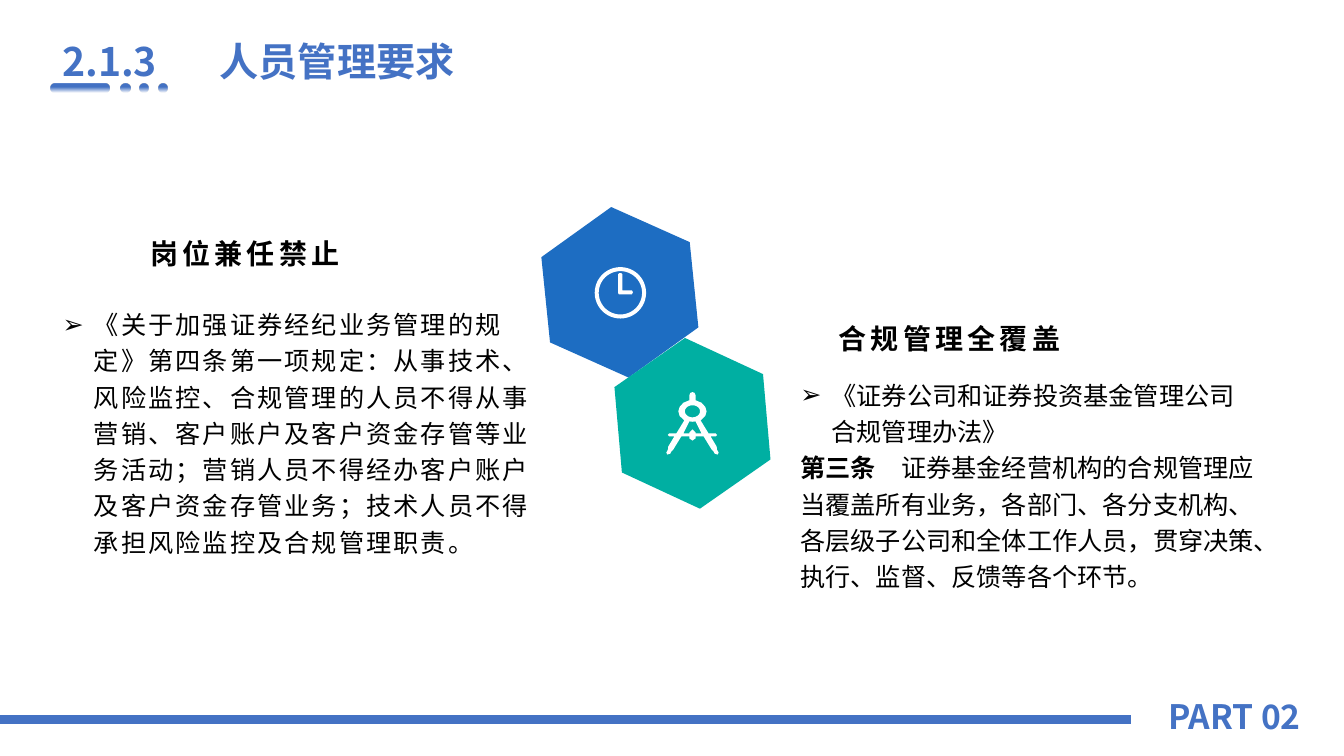
from dataclasses import dataclass
from math import cos, pi, sin
from typing import Any

from lxml.etree import SubElement as Sub
from pptx import Presentation as Deck
from pptx.dml.color import RGBColor as Rgb
from pptx.enum.shapes import MSO_CONNECTOR as Link, MSO_SHAPE as Kind
from pptx.enum.text import MSO_ANCHOR as Anchor, MSO_AUTO_SIZE as Auto, PP_ALIGN as Align
from pptx.oxml.ns import qn
from pptx.util import Pt

FACE = "Noto Sans CJK SC"
HUES = {"accent": "4472C4", "blue": "1D6DC2", "teal": "00AFA2",
        "white": "FFFFFF", "black": "000000"}
Spot = tuple[float, float]
Box = tuple[float, float, float, float]


@dataclass
class Run:
    text: str
    size: float = 18
    bold: bool = False
    hue: str = "black"
    gap: int = 0
    fade: bool = False


@dataclass
class Para:
    runs: list[Run]
    line: float = 1.2
    mark: str = ""


@dataclass
class Block:
    slot: int | None
    box: Box
    paras: list[Para]
    wrap: bool = True
    grow: bool = False


@dataclass
class Hex:
    box: Box
    turn: float
    hue: str


@dataclass
class Icon:
    x: float
    y: float
    rings: list[list[Spot]]


def put(thing: Any, form: dict[str, Any]) -> None:
    for name, value in form.items():
        setattr(thing, name, value)


def rgb(hue: str) -> Rgb:
    return Rgb.from_string(HUES[hue])


def blend(fill: Any, node: Any) -> None:
    """Accent colour fading out downwards."""
    fill.gradient()
    fill.gradient_angle = 270
    for stop, place in zip(fill.gradient_stops, (0.4, 1)):
        stop.color.rgb = rgb("accent")
        stop.position = place
    last = list(node.iter(qn("a:srgbClr")))[-1]
    Sub(last, qn("a:alpha")).set("val", "0")


def paint(shape: Any, hue: str) -> None:
    shape.shadow.inherit = False
    shape.line.fill.background()
    shape.fill.solid()
    shape.fill.fore_color.rgb = rgb(hue)


def write(para: Any, item: Para) -> None:
    props = para._p.get_or_add_pPr()
    inset = Pt(22.32) if item.mark else 0
    props.set("marL", str(inset))
    props.set("indent", str(-inset))
    if item.mark:
        Sub(props, qn("a:buChar")).set("char", item.mark)
    else:
        Sub(props, qn("a:buNone"))
    put(para, {"alignment": Align.LEFT, "line_spacing": item.line,
               "space_before": Pt(0), "space_after": Pt(0)})
    for bit in item.runs:
        run = para.add_run()
        run.text = bit.text
        put(run.font, {"size": Pt(bit.size), "bold": bit.bold, "name": FACE})
        if bit.fade:
            blend(run.font.fill, run._r)
        else:
            run.font.color.rgb = rgb(bit.hue)
        props = run._r.get_or_add_rPr()
        Sub(props, qn("a:ea")).set("typeface", FACE)
        if bit.gap:
            props.set("spc", str(bit.gap))


def place(slide: Any, block: Block) -> None:
    spots = [Pt(n) for n in block.box]
    if block.slot is None:
        shape = slide.shapes.add_textbox(*spots)
    else:
        shape = slide.placeholders[block.slot]
        put(shape, dict(zip(("left", "top", "width", "height"), spots)))
    frame = shape.text_frame
    put(frame, {"word_wrap": block.wrap, "vertical_anchor": Anchor.TOP,
                "auto_size": Auto.SHAPE_TO_FIT_TEXT if block.grow else Auto.NONE})
    for i, item in enumerate(block.paras):
        write(frame.add_paragraph() if i else frame.paragraphs[0], item)


def trace(slide: Any, rings: list[list[Spot]], x: float, y: float, hue: str) -> Any:
    rings = [[(Pt(x + a), Pt(y + b)) for a, b in ring] for ring in rings]
    pen = slide.shapes.build_freeform(*rings[0][0])
    for i, ring in enumerate(rings):
        if i:
            pen.move_to(*ring[0])
        pen.add_line_segments(ring[1:], close=True)
    shape = pen.convert_to_shape()
    paint(shape, hue)
    return shape


def oval(rx: float, ry: float, y: float = 0) -> list[Spot]:
    steps = [k * pi / 24 for k in range(48)]
    return [(rx * cos(t), y + ry * sin(t)) for t in steps]


def fold(half: list[Spot]) -> list[Spot]:
    """Complete a right half with its mirror image."""
    return half + [(-x, y) for x, y in half[-2:0:-1]]


def head(text: str) -> list[Para]:
    return [Para([Run(text, 20, True, gap=300)])]


BLOCKS = [
    Block(0, (149.76, 23.04, 561.6, 41.04),
          [Para([Run("人员管理要求", 28, True, "accent")], 1)], grow=True),
    Block(1, (100.08, 160.56, 296.64, 42.48), head("岗位兼任禁止")),
    Block(2, (37.44, 213.12, 362.88, 222.48), [Para([Run(
        "《关于加强证券经纪业务管理的规定》第四条第一项规定：从事技术、风险监控、"
        "合规管理的人员不得从事营销、客户账户及客户资金存管等业务活动；"
        "营销人员不得经办客户账户及客户资金存管业务；"
        "技术人员不得承担风险监控及合规管理职责。", gap=150)], mark="➢")]),
    Block(3, (591.84, 221.04, 296.64, 42.48), head("合规管理全覆盖")),
    Block(4, (564.48, 263.52, 341.28, 222.48), [
        Para([Run("《证券公司和证券投资基金管理公司合规管理办法》")], mark="➢"),
        Para([Run("第三条", bold=True), Run(
            "　证券基金经营机构的合规管理应当覆盖所有业务，各部门、各分支机构、"
            "各层级子公司和全体工作人员，贯穿决策、执行、监督、反馈等各个环节。")])]),
    Block(None, (37.44, 23.04, 82.8, 41.04),
          [Para([Run("2.1.3", 28, True, fade=True)], 1)], False, True),
    Block(None, (827.28, 493.2, 114, 36),
          [Para([Run("PART 02", 24, True, fade=True)], 1)], False),
]
HEXES = [Hex((389.52, 147.6, 106.56, 122.4), -5.8, "blue"),
         Hex((441.36, 241.2, 106.56, 122.4), -5, "teal")]
HANDS = [(-1.6, -13.2), (-0.8, -14), (0.6, -14), (1.4, -13.2), (1.4, -1.8),
         (8.2, -1.8), (9, -0.4), (8.2, 1.1), (-1, 1.1), (-1.6, 0.4)]
LEGS = [(0, 0), (1.5, 0.5), (2.2, 2.2), (2.2, 5.8), (6.5, 7.6), (9.2, 10.6),
        (10.1, 13.7), (9.2, 17), (6.5, 19.6), (5.8, 20.2), (11.5, 29.5),
        (16.6, 29.5), (17.6, 30.6), (16.6, 31.7), (13, 31.7), (17.3, 38.9),
        (17.5, 41), (18.7, 43.2), (18, 44.6), (15.8, 43.9), (15.1, 42.5),
        (13.7, 41), (8, 31.7), (2.2, 31.7), (2.2, 33.1), (0, 34.6)]
NOTCH = [(0, 21.2), (2.2, 20.9), (6.5, 29.5), (2.2, 29.5), (2.2, 28.8), (0, 26.6)]
ICONS = [Icon(443.16, 209.16, [oval(18.36, 18.36), oval(15.5, 15.5), HANDS]),
         Icon(494.64, 280.08, [fold(LEGS), fold(NOTCH), oval(5.4, 4.3, 13.7)])]


def main() -> None:
    deck = Deck()
    put(deck, {"slide_width": Pt(960), "slide_height": Pt(540)})
    slide = deck.slides.add_slide(deck.slide_layouts[4])

    # Dash and dots under the number
    marks = [(Kind.ROUNDED_RECTANGLE, 36, 42.48)]
    marks += [(Kind.OVAL, 86.4 + 13.32 * k, 6.48) for k in range(3)]
    for kind, x, width in marks:
        shape = slide.shapes.add_shape(kind, Pt(x), Pt(59.76), Pt(width), Pt(6.48))
        if kind == Kind.ROUNDED_RECTANGLE:
            shape.adjustments[0] = 0.5
        paint(shape, "accent")
        blend(shape.fill, shape._element.spPr)

    # Hexagons and their icons
    for item in HEXES:
        x, y, w, h = item.box
        ring = fold([(0, 0), (w / 2, h / 4), (w / 2, h * 3 / 4), (0, h)])
        trace(slide, [ring], x + w / 2, y, item.hue).rotation = item.turn
    for icon in ICONS:
        trace(slide, icon.rings, icon.x, icon.y, "white")

    # Title, headings and texts
    for block in BLOCKS:
        place(slide, block)

    # Footer line
    rule = slide.shapes.add_connector(Link.STRAIGHT, 0, Pt(514.08), Pt(807.84), Pt(514.08))
    rule.line.width = Pt(6)
    rule.line.color.rgb = rgb("accent")
    Sub(rule._element.spPr, qn("a:effectLst"))

    deck.save("out.pptx")


if __name__ == "__main__":
    main()
